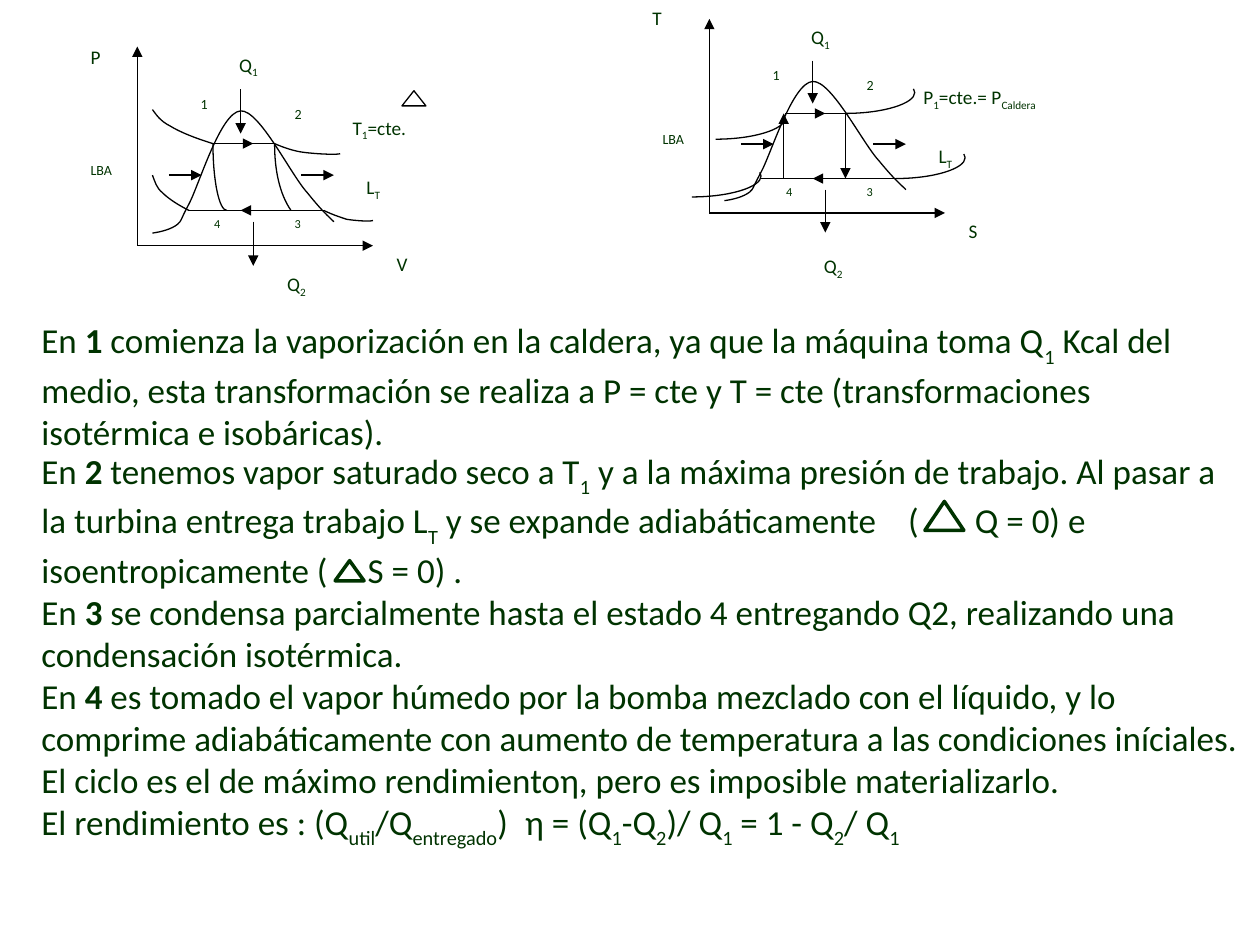
"""Build the slide on the steam cycle: P-V and T-S diagrams above their explanation."""
import lxml.etree
import pptx
import pptx.dml.color
import pptx.enum.shapes
import pptx.enum.text
import pptx.oxml.ns
import pptx.util

GREEN, BLACK, WHITE = "003300", "000000", "FFFFFF"
FONT = "Calibri"
SHAPES = pptx.enum.shapes.MSO_SHAPE
ANCHOR = pptx.enum.text.MSO_ANCHOR
FIT = pptx.enum.text.MSO_AUTO_SIZE

SHARED_LABELS = [
    ("1", 8, 0.41, -1.24, 0.19, 0.21), ("2", 8, 1.15, -1.16, 0.33, 0.27),
    ("3", 7, 1.15, -0.28, 0.25, 0.22), ("4", 7, 0.51, -0.28, 0.25, 0.22),
    ("LBA", 8, -0.47, -0.72, 0.41, 0.26), ("Q|_1", 11, 0.71, -1.58, 0.44, 0.28),
    ("L|_T", 11, 1.72, -0.61, 0.61, 0.28),
]
SHARED_ARROWS = [
    (0, 0, 1.87, 0), (0, 0, 0, -1.58),
    (0.82, -1.24, 0.82, -0.89), (0.92, -0.19, 0.92, 0.16),
    (0.25, -0.56, 0.51, -0.56), (1.3, -0.56, 1.56, -0.56),
    (1.09, -0.28, 0.82, -0.28), (0.71, -0.81, 0.92, -0.81),
]
ISOTHERMS = [(0.41, -0.28, 1.48, -0.28), (0.51, -0.28, 1.48, -0.28),
             (0.6, -0.81, 1.09, -0.81)]
DOME = [(0.12, -0.1), (0.19, -0.11), (0.27, -0.13), (0.32, -0.17), (0.36, -0.21),
        (0.33, -0.18), (0.41, -0.33), (0.49, -0.48), (0.66, -1.06), (0.82, -1.07),
        (0.97, -1.08), (1.22, -0.56), (1.35, -0.42), (1.47, -0.27), (1.52, -0.23),
        (1.56, -0.19)]
PRESSURE_CURVES = [
    [(0.41, -0.28), (0.33, -0.32), (0.25, -0.37), (0.2, -0.42), (0.15, -0.46),
     (0.14, -0.51), (0.12, -0.56)],
    [(1.48, -0.28), (1.54, -0.25), (1.6, -0.23), (1.66, -0.21), (1.72, -0.2),
     (1.84, -0.19), (1.87, -0.2)],
    [(0.6, -0.81), (0.47, -0.85), (0.34, -0.9), (0.26, -0.95), (0.18, -0.99),
     (0.15, -1.04), (0.12, -1.08)],
    [(1.09, -0.81), (1.16, -0.78), (1.24, -0.75), (1.33, -0.74), (1.41, -0.73),
     (1.57, -0.72), (1.61, -0.73)],
    [(0.71, -0.28), (0.65, -0.28), (0.6, -0.51), (0.6, -0.81)],
    [(1.22, -0.28), (1.13, -0.41), (1.09, -0.6), (1.09, -0.8)],
]
HOOK = [(0, 0), (0.3, 0), (0.55, -0.08), (0.55, -0.17), (0.55, -0.18), (0.54, -0.19),
        (0.54, -0.2)]
HOOK_STARTS = [(0.05, -0.6), (-0.14, -0.13), (1.08, -0.81), (1.48, -0.28)]
DIAGRAMS = [
    dict(origin=(1.09, 1.95), stretch=1, curves=PRESSURE_CURVES, arrows=[],
         labels=[("P", 11, -0.47, -1.64, 0.29, 0.33), ("Q|_2", 11, 1.09, 0.16, 0.4, 0.31),
                 ("T|_1|=cte.", 11, 1.61, -1.08, 0.64, 0.36),
                 ("V", 11, 1.96, 0, 0.47, 0.35)]),
    dict(origin=(5.63, 1.69), stretch=0.975,
         curves=[[(x + across, y + down) for across, down in HOOK] for x, y in HOOK_STARTS],
         arrows=[(1.08, -0.81, 1.08, -0.28), (0.59, -0.28, 0.59, -0.81)],
         labels=[("T", 11, -0.55, -1.73, 0.42, 0.31), ("Q|_2", 11, 0.81, 0.29, 0.43, 0.39),
                 ("P|_1|=cte.= P|_Caldera", 11, 1.6, -1.09, 1.59, 0.36),
                 ("S", 11, 1.96, 0, 0.47, 0.35)]),
]
BODY = [
    (2.48, 1.41, ANCHOR.TOP, FIT.NONE, [
        ("En |*1| comienza la vaporización en la caldera, ya que la máquina toma Q|_1| Kcal del "
         "medio, esta transformación se realiza a P = cte y T = cte (transformaciones "
         "isotérmica e isobáricas).", [])]),
    (3.59, 3.13, ANCHOR.MIDDLE, FIT.SHAPE_TO_FIT_TEXT, [
        ("En |*2| tenemos vapor saturado seco a T|_1| y a la máxima presión de trabajo. Al pasar "
         "a la turbina entrega trabajo L|_T| y se expande adiabáticamente\t(\tQ = 0) e "
         "isoentropicamente (\tS = 0) .", [2.59, 6.88, 7.41]),
        ("En |*3| se condensa parcialmente hasta el estado 4 entregando Q2, realizando una "
         "condensación isotérmica.", []),
        ("En |*4| es tomado el vapor húmedo por la bomba mezclado con el líquido, y lo comprime "
         "adiabáticamente con aumento de temperatura a las condiciones iníciales.", []),
        ("El ciclo es el de máximo rendimientoη, pero es imposible materializarlo.", []),
        ("El rendimiento es : (Q|_util|/Q|_entregado|)\tη = (Q|_1|-Q|_2|)/ Q|_1| = 1 - Q|_2|/ Q"
         "|_1", [3.84])]),
]
DELTAS = [(3.19, 0.72, 0.19, 0.12, BLACK, 0.75), (7.34, 3.98, 0.31, 0.23, GREEN, 2),
          (2.66, 4.45, 0.23, 0.16, GREEN, 2)]


def inches(*values):
    return [pptx.util.Inches(value) for value in values]


def color(value):
    return pptx.dml.color.RGBColor.from_string(value)


def add_child(parent, tag, **attributes):
    child = lxml.etree.SubElement(parent, pptx.oxml.ns.qn(tag))
    for name, value in attributes.items():
        child.set(name, value)
    return child


def write_text(frame, paragraphs, size, baseline=-25, space_after=0, anchor=ANCHOR.TOP):
    frame.word_wrap = True
    frame.vertical_anchor = anchor
    for index, (text, tabs) in enumerate(paragraphs):
        paragraph = frame.add_paragraph() if index else frame.paragraphs[0]
        paragraph.alignment = pptx.enum.text.PP_ALIGN.LEFT
        paragraph.space_after = pptx.util.Pt(space_after)
        if tabs:
            stops = add_child(paragraph._p.get_or_add_pPr(), "a:tabLst")
            for position in inches(*tabs):
                add_child(stops, "a:tab", pos=str(position), algn="l")
        for part in text.split("|"):
            run = paragraph.add_run()
            run.text = part.lstrip("_*")
            run.font.name, run.font.size = FONT, pptx.util.Pt(size)
            run.font.color.rgb = color(GREEN)
            run.font.bold = part.startswith("*")
            if part.startswith("_"):
                run._r.get_or_add_rPr().set("baseline", str(baseline * 1000))


def add_box(shapes, kind, box, line, width=0.75):
    shape = shapes.add_shape(kind, *inches(*box))
    shape.shadow.inherit = False
    shape.fill.solid()
    shape.fill.fore_color.rgb = color(WHITE)
    shape.line.color.rgb = color(line)
    shape.line.width = pptx.util.Pt(width)
    return shape


def add_line(shapes, start, end, arrow=False):
    connector = shapes.add_connector(
        pptx.enum.shapes.MSO_CONNECTOR.STRAIGHT, *inches(*start, *end))
    connector.line.color.rgb = color(BLACK)
    connector.line.width = pptx.util.Pt(0.75)
    if arrow:
        add_child(connector.line._get_or_add_ln(), "a:tailEnd", type="triangle")
    add_child(connector._element.spPr, "a:effectLst")


def add_curve(shapes, controls):
    points = [inches(*point) for point in controls]
    builder = shapes.build_freeform(*points[0])
    builder.add_line_segments(points[1:], close=False)
    curve = builder.convert_to_shape()
    outline = next(curve._element.iter(pptx.oxml.ns.qn("a:path")))
    segments = list(outline)[1:]
    for first in range(0, len(segments), 3):
        bezier = add_child(outline, "a:cubicBezTo")
        for segment in segments[first:first + 3]:
            bezier.append(segment[0])
            outline.remove(segment)
    curve.shadow.inherit = False
    curve.fill.background()
    curve.line.color.rgb = color(BLACK)
    curve.line.width = pptx.util.Pt(0.75)


def add_diagram(slide, origin, stretch, curves, arrows, labels):
    shapes = slide.shapes.add_group_shape().shapes

    def place(x, y):
        return origin[0] + x, origin[1] + y * stretch

    for text, size, x, y, width, height in SHARED_LABELS + labels:
        box = (*place(x, y), width, height * stretch)
        label = add_box(shapes, SHAPES.RECTANGLE, box, WHITE)
        write_text(label.text_frame, [(text, [])], size, space_after=10)
    for controls in [DOME] + curves:
        add_curve(shapes, [place(*point) for point in controls])
    for lines, arrow in ((ISOTHERMS, False), (SHARED_ARROWS + arrows, True)):
        for line in lines:
            add_line(shapes, place(*line[:2]), place(*line[2:]), arrow)


def main():
    presentation = pptx.Presentation()
    presentation.slide_width, presentation.slide_height = inches(10, 7.5)
    slide = presentation.slides.add_slide(presentation.slide_layouts[6])
    for diagram in DIAGRAMS:
        add_diagram(slide, **diagram)
    for top, height, anchor, fit, paragraphs in BODY:
        box = slide.shapes.add_textbox(*inches(0.23, top, 9.77, height))
        write_text(box.text_frame, paragraphs, 20, baseline=-30, anchor=anchor)
        box.text_frame.auto_size = fit
    for *box, line, width in DELTAS:
        add_box(slide.shapes, SHAPES.ISOSCELES_TRIANGLE, box, line, width)
    presentation.save("out.pptx")


if __name__ == "__main__":
    main()
